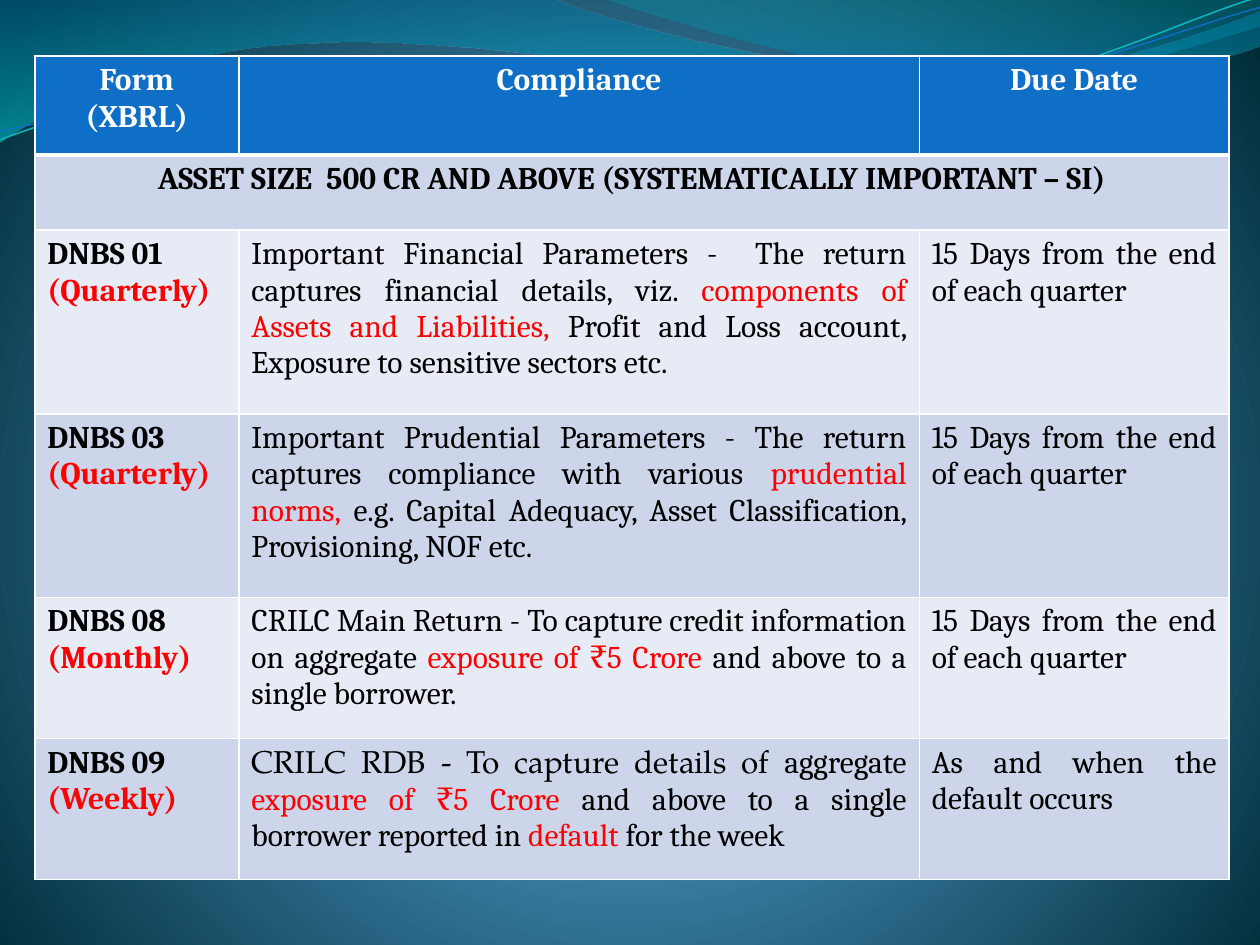
"""Build a slide with a table of regulatory returns, their content and due dates."""
from dataclasses import dataclass
from typing import NamedTuple, Optional

from lxml import etree
from pptx import Presentation
from pptx.dml.color import RGBColor
from pptx.enum.text import PP_ALIGN
from pptx.oxml import parse_xml
from pptx.oxml.ns import nsdecls, qn
from pptx.util import Pt

LEFT, CENTER, JUSTIFY = PP_ALIGN.LEFT, PP_ALIGN.CENTER, PP_ALIGN.JUSTIFY
BLANK_LAYOUT = 6


@dataclass(frozen=True)
class Theme:
    font: str = "Cambria"
    accent_font: str = "TeX Gyre Pagella"
    size: float = 18
    header: str = "0F6FC6"
    band_dark: str = "CCD5EA"
    band_light: str = "E7EBF5"
    white: str = "FFFFFF"
    text: str = "000000"
    highlight: str = "FF0000"
    border: float = 1
    header_border: float = 3


THEME = Theme()


class Stop(NamedTuple):
    position: int
    color: str
    opacity: int = 100


class Run(NamedTuple):
    text: str
    color: str = THEME.text
    bold: bool = False
    font: str = THEME.font


class Wave(NamedTuple):
    """A start point, then segments of one point (line) or three points (curve)."""
    start: tuple
    segments: list
    stops: Optional[list] = None
    line_color: str = ""
    line_width: float = 0
    rotation: float = 0


class Return(NamedTuple):
    form: list
    compliance: list
    due: str


VERTICAL = '<a:lin ang="5400000" scaled="1"/>'
RADIAL = '<a:path path="circle"><a:fillToRect l="10000" t="110000" r="10000" b="100000"/></a:path>'
BACKGROUND = [Stop(0, "4AA0D6"), Stop(25, "4C98C7"), Stop(100, "002C38")]

FILLED_WAVES = [
    Wave((0, 0), [
        ((316.8, -0.7),),
        ((342.7, 12.2), (478.1, 45.4), (545.8, 45.4)),
        ((614.2, 45.4), (689.8, 18.7), (720, 6.5)),
        ((720.7, 25.9),),
        ((707.8, 31.7), (626.4, 54.7), (537.1, 54)),
        ((447.8, 54), (275, 20.2), (185, 24.5)),
        ((92.9, 25.9), (33.1, 59.8), (-0.7, 81.4)),
        ((0, 0),),
    ], [Stop(0, "0074A1", 45), Stop(100, "00C6CF", 55)]),
    Wave((344.9, -0.7), [
        ((366.5, 7.9), (491, 44.6), (553.7, 46.8)),
        ((616.3, 49.7), (691.9, 23), (720, 15.1)),
        ((720, 0),),
        ((344.9, -0.7),),
    ], [Stop(0, "00A1A9", 30), Stop(80, "008BBF", 45)]),
]
LINE_WAVES = [
    Wave((-1.4, 62.9), [
        ((33.7, 51.6), (114, 29.4), (199.8, 30)),
        ((284.8, 30.3), (425.8, 67.2), (512.4, 64.9)),
        ((599, 62.4), (676.4, 25.7), (720.2, 15.6)),
    ], line_color="0AB8BF", line_width=0.85, rotation=357.3),
    Wave((-1.2, 57.9), [
        ((33, 53.7), (118.3, 32.5), (204, 33)),
        ((290.5, 33.5), (428.9, 63.8), (515.5, 61.3)),
        ((601.3, 59.7), (678.5, 30.1), (721.4, 21.3)),
    ], line_color="0F6FC6", line_width=0.75, rotation=357.3),
]


def strong(text: str) -> Run:
    return Run(text, bold=True)


def red(text: str, bold: bool = False) -> Run:
    return Run(text, THEME.highlight, bold)


COLUMNS = [116.6, 388.8, 177.1]
ROWS = [56.6, 43, 104.9, 104.9, 80.6, 80.6]
HEADINGS = ["Form (XBRL)", "Compliance", "Due Date"]
SECTION = "ASSET SIZE  500 CR AND ABOVE (SYSTEMATICALLY IMPORTANT – SI)"
QUARTER_END = "15 Days from the end of each quarter"
RETURNS = [
    Return([[strong("DNBS 01")], [red("(Quarterly)", True)]], [
        Run("Important Financial Parameters -  The return captures financial details, viz. "),
        red("components of Assets and Liabilities,"),
        Run(" Profit and Loss account, Exposure to sensitive sectors etc."),
    ], QUARTER_END),
    Return([[strong("DNBS 03")], [red("(Quarterly)", True)]], [
        Run("Important Prudential Parameters - The return captures compliance with various "),
        red("prudential norms,"),
        Run(" e.g. Capital Adequacy, Asset Classification, Provisioning, NOF etc."),
    ], QUARTER_END),
    Return([[strong("DNBS 08 "), red("(Monthly)", True)]], [
        Run("CRILC Main Return - To capture credit information on aggregate "),
        red("exposure of ₹5 Crore "),
        Run("and above to a single borrower."),
    ], QUARTER_END),
    Return([[strong("DNBS 09")], [red("(Weekly)", True)]], [
        Run("CRILC RDB - To capture details of ", font=THEME.accent_font), Run("aggregate "),
        red("exposure of ₹5 Crore "), Run("and above to a single borrower reported in "),
        red("default"), Run(" for the week"),
    ], "As and when the default occurs"),
]


def apply_gradient(fill, properties, stops: list, direction: str) -> None:
    fill.solid()
    stop_xml = "".join(
        f'<a:gs pos="{stop.position * 1000}"><a:srgbClr val="{stop.color}">'
        f'<a:alpha val="{stop.opacity * 1000}"/></a:srgbClr></a:gs>' for stop in stops)
    gradient = parse_xml(f'<a:gradFill {nsdecls("a")} rotWithShape="1">'
                         f'<a:gsLst>{stop_xml}</a:gsLst>{direction}</a:gradFill>')
    properties.replace(properties.find(qn("a:solidFill")), gradient)


def bend_segments(shape, segments: list) -> None:
    lines = iter(shape.element.findall(f'.//{qn("a:lnTo")}'))
    for segment in segments:
        pieces = [next(lines) for _ in segment]
        if len(pieces) == 3:
            curve = etree.Element(qn("a:cubicBezTo"))
            pieces[0].addprevious(curve)
            for piece in pieces:
                curve.append(piece[0])
                piece.getparent().remove(piece)


def draw_wave(shapes, wave: Wave) -> None:
    builder = shapes.build_freeform(*map(Pt, wave.start))
    builder.add_line_segments([(Pt(x), Pt(y)) for segment in wave.segments for x, y in segment],
                              close=False)
    shape = builder.convert_to_shape()
    bend_segments(shape, wave.segments)
    shape.shadow.inherit = False
    shape.rotation = wave.rotation
    if wave.stops:
        apply_gradient(shape.fill, shape.element.spPr, wave.stops, VERTICAL)
        shape.line.fill.background()
    else:
        shape.fill.background()
        shape.line.color.rgb = RGBColor.from_string(wave.line_color)
        shape.line.width = Pt(wave.line_width)


def set_borders(cell, top: float, bottom: float) -> None:
    properties = cell._tc.get_or_add_tcPr()
    widths = {"lnL": THEME.border, "lnR": THEME.border, "lnT": top, "lnB": bottom}
    for index, (tag, width) in enumerate(widths.items()):
        line = etree.Element(qn(f"a:{tag}"), w=str(Pt(width)))
        solid = etree.SubElement(line, qn("a:solidFill"))
        etree.SubElement(solid, qn("a:srgbClr"), val=THEME.white)
        properties.insert(index, line)


def write_cell(cell, paragraphs: list, alignment: PP_ALIGN) -> None:
    frame = cell.text_frame
    for index, runs in enumerate(paragraphs):
        paragraph = frame.add_paragraph() if index else frame.paragraphs[0]
        paragraph.alignment = alignment
        for item in runs:
            run = paragraph.add_run()
            run.text = item.text
            run.font.name, run.font.size, run.font.bold = item.font, Pt(THEME.size), item.bold
            run.font.color.rgb = RGBColor.from_string(item.color)


def draw_table(slide) -> None:
    table = slide.shapes.add_table(len(ROWS), len(COLUMNS), Pt(19.9), Pt(32),
                                   Pt(sum(COLUMNS)), Pt(sum(ROWS))).table
    for column, width in zip(table.columns, COLUMNS):
        column.width = Pt(width)
    for index, (row, height) in enumerate(zip(table.rows, ROWS)):
        row.height = Pt(height)
        band = THEME.band_dark if index % 2 else THEME.band_light
        for cell in row.cells:
            cell.fill.solid()
            cell.fill.fore_color.rgb = RGBColor.from_string(band if index else THEME.header)
            set_borders(cell, THEME.header_border if index == 1 else THEME.border,
                        THEME.border if index else THEME.header_border)
    for column, heading in enumerate(HEADINGS):
        write_cell(table.cell(0, column), [[Run(heading, THEME.white, True)]], CENTER)
    table.cell(1, 0).merge(table.cell(1, len(COLUMNS) - 1))
    write_cell(table.cell(1, 0), [[strong(SECTION)]], CENTER)
    for row, entry in enumerate(RETURNS, start=2):
        write_cell(table.cell(row, 0), entry.form, LEFT)
        write_cell(table.cell(row, 1), [entry.compliance], JUSTIFY)
        write_cell(table.cell(row, 2), [[Run(entry.due)]], JUSTIFY)


def main() -> None:
    presentation = Presentation()
    presentation.slide_width, presentation.slide_height = Pt(720), Pt(540)
    slide = presentation.slides.add_slide(presentation.slide_layouts[BLANK_LAYOUT])
    fill = slide.background.fill
    fill.solid()
    apply_gradient(fill, slide.element.find(f'.//{qn("p:bgPr")}'), BACKGROUND, RADIAL)
    for wave in FILLED_WAVES:
        draw_wave(slide.shapes, wave)
    line_group = slide.shapes.add_group_shape()
    for wave in LINE_WAVES:
        draw_wave(line_group.shapes, wave)
    draw_table(slide)
    presentation.save("out.pptx")


if __name__ == "__main__":
    main()
